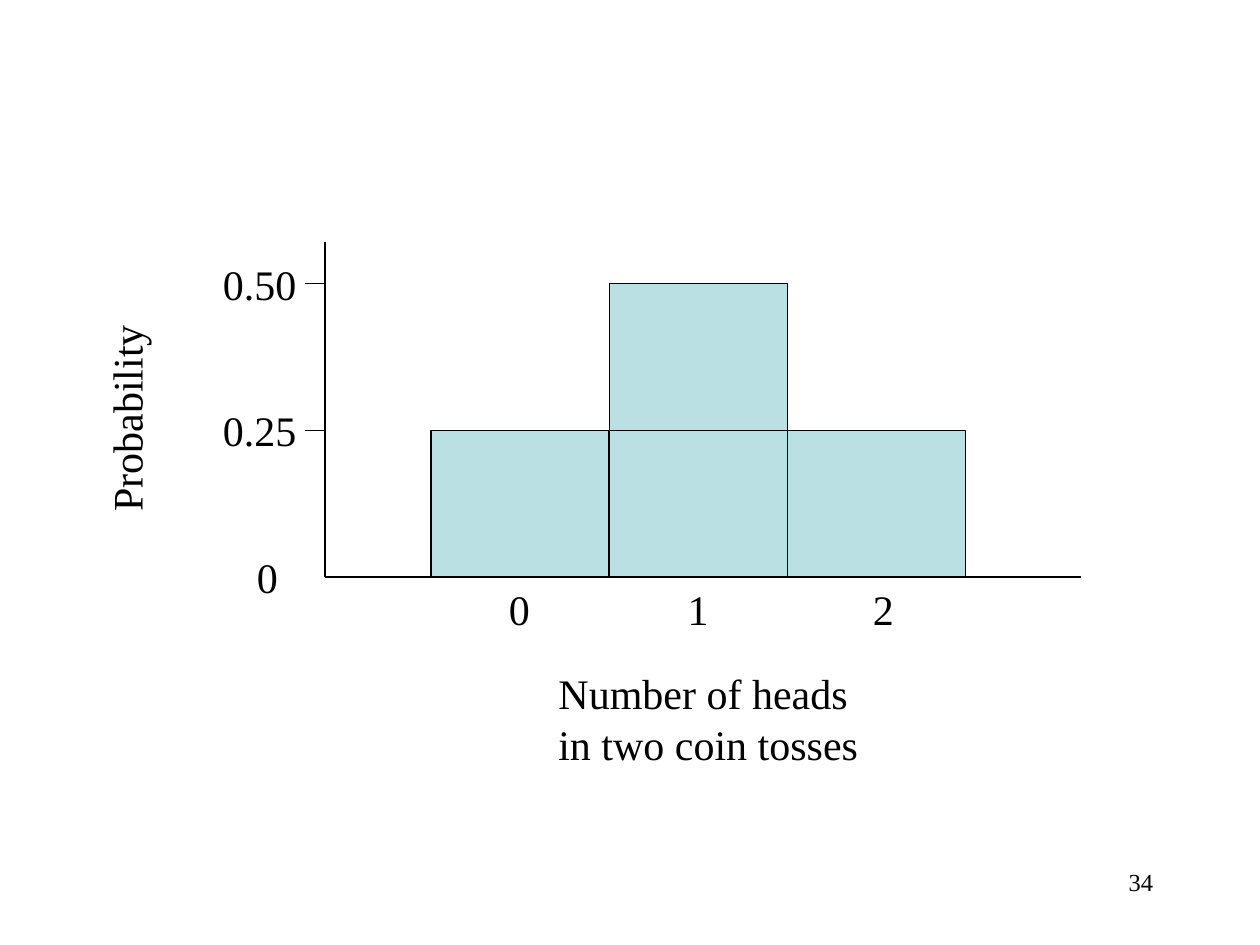
import pptx
import pptx.dml.color
import pptx.enum.shapes
import pptx.enum.text
import pptx.util
from pptx.util import Inches
from lxml import etree

INK = "000000"
BAR_FILL = "BBE0E3"
FONT = "Times New Roman"
ALIGN = pptx.enum.text.PP_ALIGN

AXIS_X, AXIS_TOP, AXIS_END = 2.58, 1.92, 8.58
BASELINE = 4.58
BAR_LEFT, BAR_WIDTH, STEP = 3.42, 1.415, 1.165  # STEP is the height of 0.25
TICK = 0.16


def color(hex_text):
    return pptx.dml.color.RGBColor.from_string(hex_text)


def set_line(shape):
    shape.line.color.rgb = color(INK)
    shape.line.width = pptx.util.Pt(0.75)


def add_line(page, x1, y1, x2, y2):
    line = page.shapes.add_connector(
        pptx.enum.shapes.MSO_CONNECTOR.STRAIGHT,
        Inches(x1), Inches(y1), Inches(x2), Inches(y2))
    set_line(line)
    etree.SubElement(line._element.spPr, pptx.oxml.ns.qn("a:effectLst"))


def add_block(page, column, level):
    """Add one 0.25 block of the histogram, counted from the lower left."""
    block = page.shapes.add_shape(
        pptx.enum.shapes.MSO_SHAPE.RECTANGLE,
        Inches(BAR_LEFT + column * BAR_WIDTH),
        Inches(BASELINE - (level + 1) * STEP),
        Inches(BAR_WIDTH), Inches(STEP))
    block.shadow.inherit = False
    block.fill.solid()
    block.fill.fore_color.rgb = color(BAR_FILL)
    set_line(block)


def add_text(page, text, left, top, width, height=0.5, size=24,
             align=ALIGN.LEFT, wrap=True, rotation=0):
    box = page.shapes.add_textbox(
        Inches(left), Inches(top), Inches(width), Inches(height))
    box.rotation = rotation
    frame = box.text_frame
    frame.word_wrap = wrap
    frame.text = text
    for para in frame.paragraphs:
        para.alignment = align
        for span in para.runs:
            span.font.name = FONT
            span.font.size = pptx.util.Pt(size)
            span.font.color.rgb = color(INK)


def main():
    deck = pptx.Presentation()
    deck.slide_width, deck.slide_height = Inches(10), Inches(7.5)
    page = deck.slides.add_slide(deck.slide_layouts[6])

    add_line(page, AXIS_X, AXIS_TOP, AXIS_X, BASELINE)
    add_line(page, AXIS_X, BASELINE, AXIS_END, BASELINE)
    for column, level in [(0, 0), (1, 0), (2, 0), (1, 1)]:
        add_block(page, column, level)

    for level, label in [(2, "0.50"), (1, "0.25")]:
        y = BASELINE - level * STEP
        add_line(page, AXIS_X, y, AXIS_X - TICK, y)
        add_text(page, label, 1.67, y - 0.25, 0.89)
    add_text(page, "0", 1.94, BASELINE - 0.25, 0.39)

    for label, left in [("0", 3.94), ("1", 5.36), ("2", 6.83)]:
        add_text(page, label, left, BASELINE, 0.39)

    add_text(page, "Probability", 0.16, 3.07, 1.68, wrap=False, rotation=270)
    add_text(page, "Number of heads\n in two coin tosses", 4.25, 5.25, 2.66,
             height=0.9, align=ALIGN.CENTER, wrap=False)
    add_text(page, "34", 7.17, 6.83, 2.08, size=14, align=ALIGN.RIGHT)

    deck.save("out.pptx")


if __name__ == "__main__":
    main()
